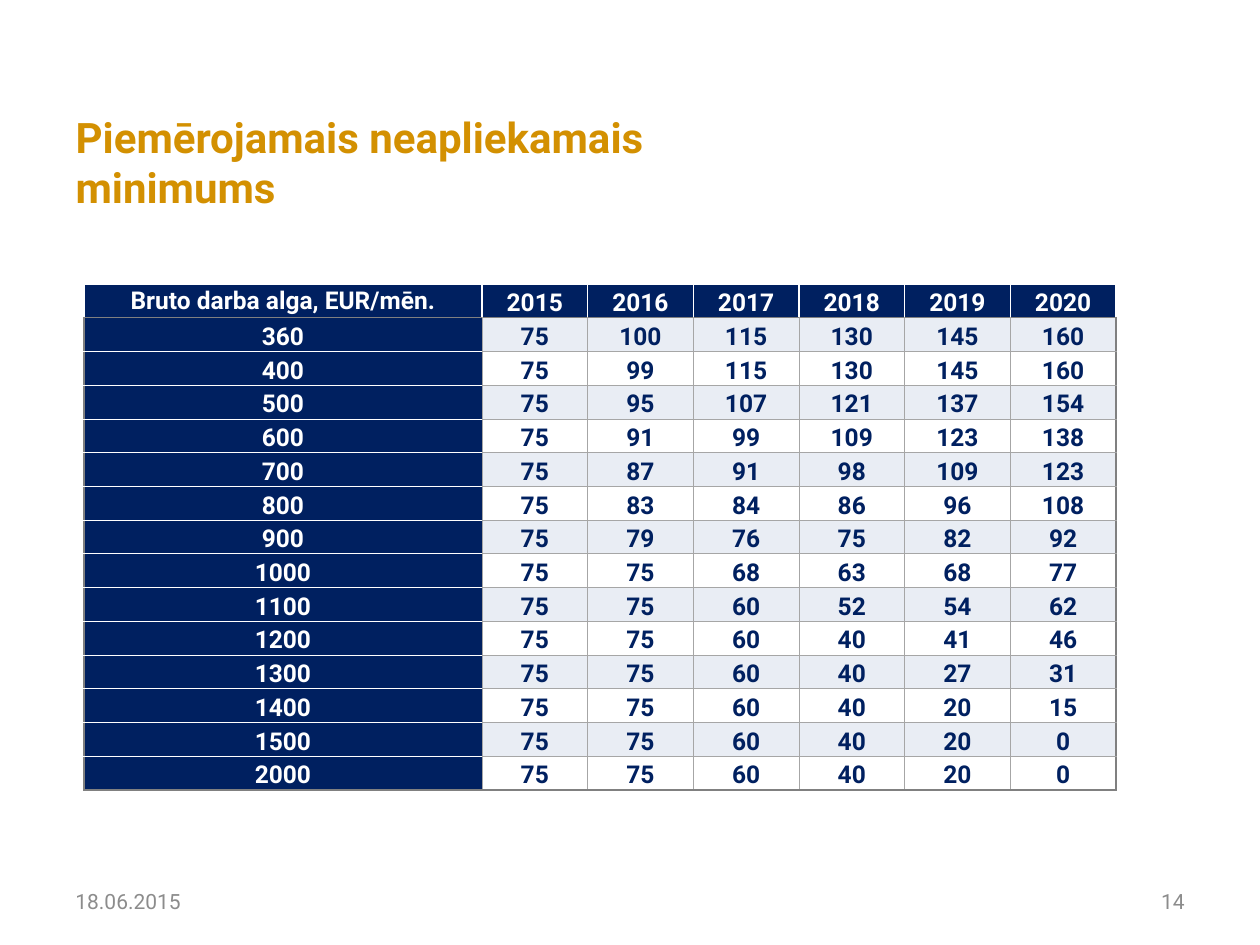
from dataclasses import dataclass

import pptx
import pptx.dml.color
import pptx.enum.text
import pptx.oxml
import pptx.oxml.ns
import pptx.util

ALIGN = pptx.enum.text.PP_ALIGN
ANCHOR = pptx.enum.text.MSO_ANCHOR
EMU_PER_PX = 914400 / 126


@dataclass(frozen=True)
class Theme:
    font: str = "Roboto"
    navy: str = "002060"
    gold: str = "D39001"
    white: str = "FFFFFF"
    band: str = "E9EDF4"
    footer: str = "8C8C8C"
    grid: str = "A6A6A6"
    frame: str = "808080"
    title_size: int = 24
    table_size: int = 14
    footer_size: int = 12


def px(length):
    return pptx.util.Emu(round(length * EMU_PER_PX))


def rgb(color):
    return pptx.dml.color.RGBColor.from_string(color)


class SlideBuilder:
    def __init__(self, presentation, theme):
        self.theme = theme
        self.slide = presentation.slides.add_slide(presentation.slide_layouts[5])

    def set_text(self, frame, text, size, color, bold=False, align=ALIGN.LEFT):
        frame.text = text
        paragraph = frame.paragraphs[0]
        paragraph.alignment = align
        font = paragraph.font
        font.name, font.size, font.bold = self.theme.font, pptx.util.Pt(size), bold
        font.color.rgb = rgb(color)

    def title(self, text, left, top, width, height):
        shape = self.slide.shapes.title
        shape.left, shape.top, shape.width, shape.height = map(px, (left, top, width, height))
        shape.fill.solid()
        shape.fill.fore_color.rgb = rgb(self.theme.white)
        frame = shape.text_frame
        frame.word_wrap = True
        frame.auto_size = pptx.enum.text.MSO_AUTO_SIZE.NONE
        frame.vertical_anchor = ANCHOR.MIDDLE
        self.set_text(frame, text, self.theme.title_size, self.theme.gold, bold=True)

    def footer(self, text, left, top, width, height, align=ALIGN.LEFT):
        box = self.slide.shapes.add_textbox(*map(px, (left, top, width, height)))
        frame = box.text_frame
        frame.word_wrap = True
        frame.vertical_anchor = ANCHOR.MIDDLE
        self.set_text(frame, text, self.theme.footer_size, self.theme.footer, align=align)

    def borders(self, cell, sides):
        properties = cell._tc.get_or_add_tcPr()
        for side, (color, points) in sides.items():
            properties.append(pptx.oxml.parse_xml(
                f'<a:ln{side} {pptx.oxml.ns.nsdecls("a")} w="{pptx.util.Pt(points)}">'
                f'<a:solidFill><a:srgbClr val="{color}"/></a:solidFill></a:ln{side}>'))

    def cell_sides(self, row, column, last_row, last_column):
        theme = self.theme
        frame, thin, white = (theme.frame, 1), (theme.grid, 0.5), (theme.white, 1)
        if row == 0:
            return {"L": white, "R": white, "T": white, "B": frame}
        rule = (theme.white, 0.5) if column == 0 else thin
        return {
            "L": frame if column == 0 else thin,
            "R": frame if column == last_column else thin,
            "T": frame if row == 1 else rule,
            "B": frame if row == last_row else rule,
        }

    def table(self, rows, left, top, width, height, label_width):
        theme = self.theme
        last_row, last_column = len(rows) - 1, len(rows[0]) - 1
        table = self.slide.shapes.add_table(
            len(rows), len(rows[0]), *map(px, (left, top, width, height))).table
        table.first_row = table.horz_banding = False
        for index, column in enumerate(table.columns):
            column.width = px((width - label_width) / last_column if index else label_width)
        for row in table.rows:
            row.height = px(height / len(rows))
        for r, values in enumerate(rows):
            for c, value in enumerate(values):
                cell = table.cell(r, c)
                dark = r == 0 or c == 0
                self.borders(cell, self.cell_sides(r, c, last_row, last_column))
                cell.fill.solid()
                cell.fill.fore_color.rgb = rgb(
                    theme.navy if dark else theme.band if r % 2 else theme.white)
                cell.margin_left = cell.margin_right = cell.margin_top = cell.margin_bottom = 0
                cell.vertical_anchor = ANCHOR.MIDDLE if r == c == 0 else ANCHOR.BOTTOM
                self.set_text(cell.text_frame, str(value), theme.table_size,
                              theme.white if dark else theme.navy, bold=True, align=ALIGN.CENTER)


ALLOWANCES = [
    ["Bruto darba alga, EUR/mēn.", 2015, 2016, 2017, 2018, 2019, 2020],
    [360, 75, 100, 115, 130, 145, 160],
    [400, 75, 99, 115, 130, 145, 160],
    [500, 75, 95, 107, 121, 137, 154],
    [600, 75, 91, 99, 109, 123, 138],
    [700, 75, 87, 91, 98, 109, 123],
    [800, 75, 83, 84, 86, 96, 108],
    [900, 75, 79, 76, 75, 82, 92],
    [1000, 75, 75, 68, 63, 68, 77],
    [1100, 75, 75, 60, 52, 54, 62],
    [1200, 75, 75, 60, 40, 41, 46],
    [1300, 75, 75, 60, 40, 27, 31],
    [1400, 75, 75, 60, 40, 20, 15],
    [1500, 75, 75, 60, 40, 20, 0],
    [2000, 75, 75, 60, 40, 20, 0],
]


def main():
    presentation = pptx.Presentation()
    presentation.slide_width, presentation.slide_height = px(1260), px(945)
    builder = SlideBuilder(presentation, Theme())

    # Title
    builder.title("Piemērojamais neapliekamais minimums", 63, 82, 798, 159)

    # Allowance by gross salary and year
    builder.table(ALLOWANCES, 84, 284, 1032, 506, label_width=398)

    # Date and slide number
    builder.footer("18.06.2015", 63, 876, 294, 50)
    builder.footer("14", 903, 876, 294, 50, align=ALIGN.RIGHT)

    presentation.save("out.pptx")


if __name__ == "__main__":
    main()
